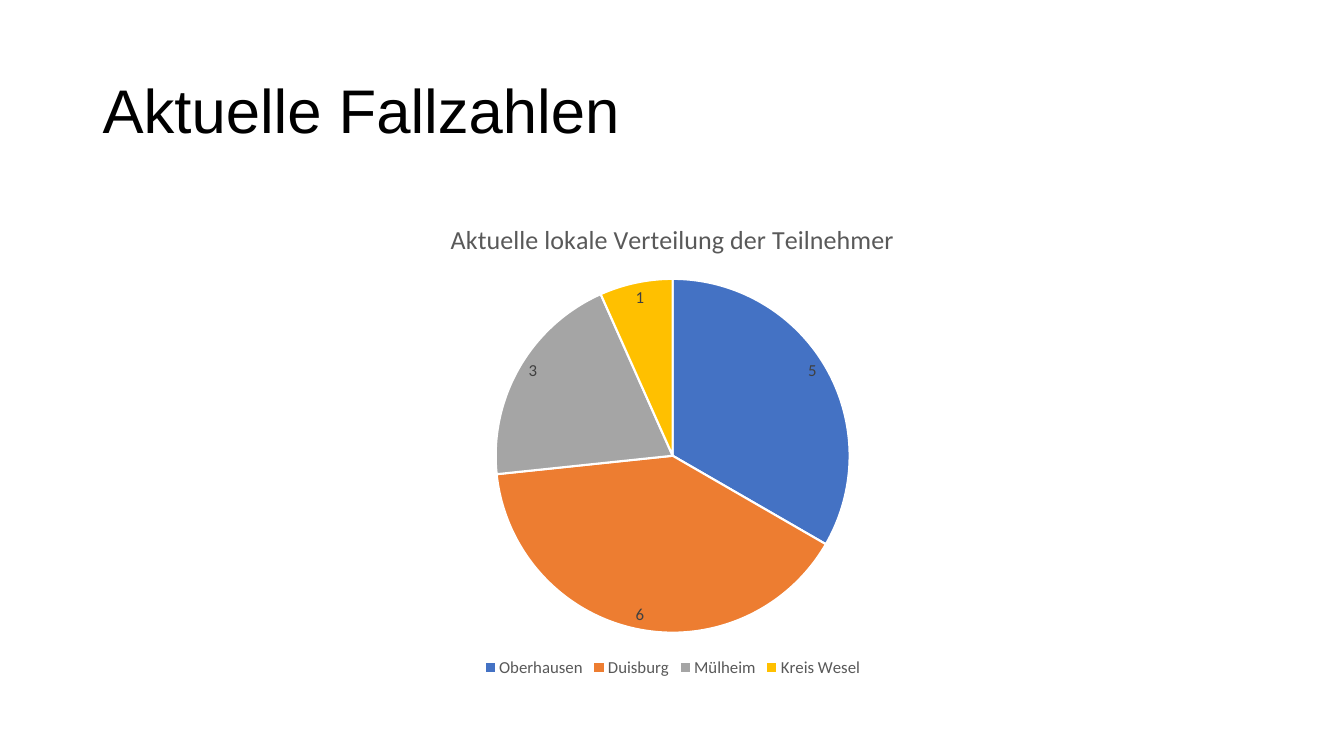
from dataclasses import dataclass
from typing import Any

from pptx import Presentation
from pptx.chart import data
from pptx.dml import color
from pptx.enum import chart as charts, text
from pptx.util import Inches, Pt

WIDTH, HEIGHT = Inches(13.33), Inches(7.5)


@dataclass(frozen=True)
class Area:
    """A rectangle in shares of the slide's size."""
    left: float
    top: float
    width: float
    height: float

    def lengths(self) -> tuple[int, ...]:
        return (int(self.left * WIDTH), int(self.top * HEIGHT),
                int(self.width * WIDTH), int(self.height * HEIGHT))


@dataclass(frozen=True)
class Region:
    name: str
    participants: int
    fill: str


TITLE_AREA = Area(0.069, 0.053, 0.863, 0.193)
CHART_AREA = Area(0.069, 0.267, 0.863, 0.635)
REGIONS = [
    Region("Oberhausen", 5, "4472C4"),
    Region("Duisburg", 6, "ED7D31"),
    Region("Mülheim", 3, "A5A5A5"),
    Region("Kreis Wesel", 1, "FFC000"),
]


def rgb(value: str) -> color.RGBColor:
    return color.RGBColor.from_string(value)


def set_attributes(target: Any, values: dict[str, Any]) -> None:
    for name, value in values.items():
        setattr(target, name, value)


def set_font(font: Any, name: str, size: float, colour: str) -> None:
    set_attributes(font, {"name": name, "size": Pt(size), "bold": False})
    font.color.rgb = rgb(colour)


def add_title(slide: Any, wording: str) -> None:
    frame = slide.shapes.add_textbox(*TITLE_AREA.lengths()).text_frame
    set_attributes(frame, {"word_wrap": True,
                           "vertical_anchor": text.MSO_ANCHOR.MIDDLE})
    paragraph = frame.paragraphs[0]
    paragraph.line_spacing = 0.9
    run = paragraph.add_run()
    run.text = wording
    set_font(run.font, "Arial", 44, "000000")


def add_region_chart(slide: Any, heading: str, regions: list[Region]) -> None:
    chart_data = data.CategoryChartData()
    chart_data.categories = [region.name for region in regions]
    chart_data.add_series("Series 1", [region.participants for region in regions])
    chart = slide.shapes.add_chart(
        charts.XL_CHART_TYPE.PIE, *CHART_AREA.lengths(), chart_data).chart
    set_font(chart.font, "Calibri", 10, "000000")

    # Heading and legend
    chart.has_title = True
    chart.chart_title.include_in_layout = False
    run = chart.chart_title.text_frame.paragraphs[0].add_run()
    run.text = heading
    set_font(run.font, "Calibri", 18.6, "595959")
    chart.has_legend = True
    set_attributes(chart.legend, {
        "position": charts.XL_LEGEND_POSITION.BOTTOM, "include_in_layout": False})
    set_font(chart.legend.font, "Calibri", 12, "595959")

    # Slices
    plot = chart.plots[0]
    plot.vary_by_categories = True
    series = plot.series[0]
    for index, region in enumerate(regions):
        slice_format = series.points[index].format
        slice_format.fill.solid()
        slice_format.fill.fore_color.rgb = rgb(region.fill)
        slice_format.line.color.rgb = rgb("FFFFFF")
        slice_format.line.width = Pt(1.5)

    # Value labels
    labels = series.data_labels
    set_attributes(labels, {"show_value": True, "show_percentage": False,
                            "position": charts.XL_LABEL_POSITION.BEST_FIT})
    set_font(labels.font, "Calibri", 12, "404040")


def main() -> None:
    presentation = Presentation()
    set_attributes(presentation, {"slide_width": WIDTH, "slide_height": HEIGHT})
    slide = presentation.slides.add_slide(presentation.slide_layouts[6])
    add_title(slide, "Aktuelle Fallzahlen")
    add_region_chart(slide, "Aktuelle lokale Verteilung der Teilnehmer", REGIONS)
    presentation.save("out.pptx")


if __name__ == "__main__":
    main()
